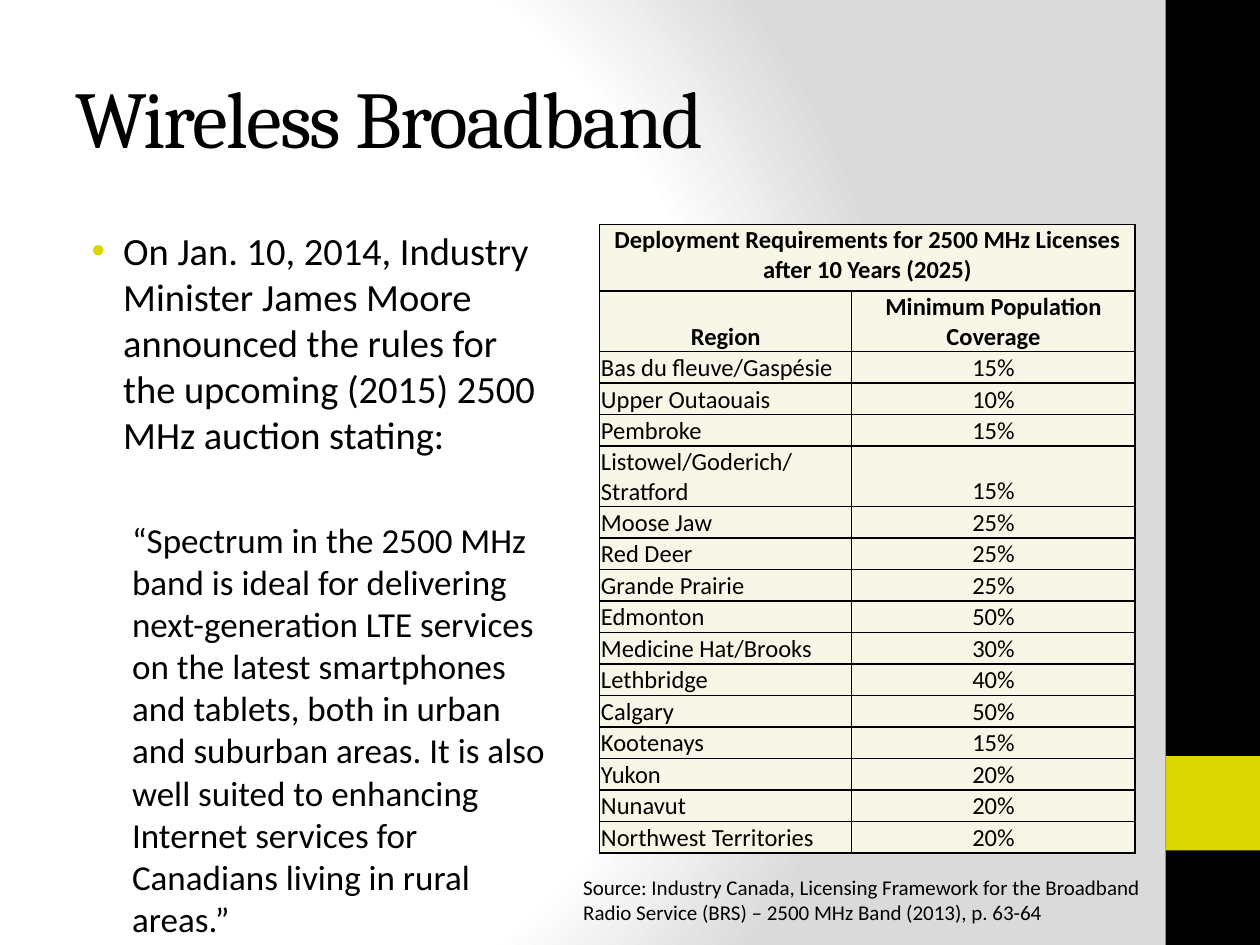
from lxml import etree
from pptx import Presentation
from pptx.dml.color import RGBColor
from pptx.enum import shapes, text
from pptx.oxml import parse_xml
from pptx.oxml.ns import nsdecls, qn
from pptx.util import Inches, Pt

BLACK = RGBColor(0, 0, 0)
LIME = RGBColor(0xDB, 0xD6, 0x00)
CREAM = RGBColor(0xF8, 0xF7, 0xE7)
WHITE = RGBColor(0xFF, 0xFF, 0xFF)
GREY = RGBColor(0xDA, 0xDA, 0xDA)

TABLE_TITLE = "Deployment Requirements for 2500 MHz Licenses after 10 Years (2025)"
HEADINGS = ("Region", "Minimum Population Coverage")
COVERAGE = [
    ("Bas du fleuve/Gaspésie", "15%"),
    ("Upper Outaouais", "10%"),
    ("Pembroke", "15%"),
    ("Listowel/Goderich/ Stratford", "15%"),
    ("Moose Jaw", "25%"),
    ("Red Deer", "25%"),
    ("Grande Prairie", "25%"),
    ("Edmonton", "50%"),
    ("Medicine Hat/Brooks", "30%"),
    ("Lethbridge", "40%"),
    ("Calgary", "50%"),
    ("Kootenays", "15%"),
    ("Yukon", "20%"),
    ("Nunavut", "20%"),
    ("Northwest Territories", "20%"),
]
ANNOUNCEMENT = (
    "On Jan. 10, 2014, Industry Minister James Moore announced the rules "
    "for the upcoming (2015) 2500 MHz auction stating:"
)
QUOTE = (
    "“Spectrum in the 2500 MHz band is ideal for delivering next-generation LTE "
    "services on the latest smartphones and tablets, both in urban and suburban "
    "areas. It is also well suited to enhancing Internet services for Canadians "
    "living in rural areas.”"
)
SOURCE = (
    "Source: Industry Canada, Licensing Framework for the Broadband Radio "
    "Service (BRS) – 2500 MHz Band (2013), p. 63-64"
)


def paint_background(slide):
    slide.background.fill.solid()
    solid = slide.element.find(".//" + qn("p:bgPr")).find(qn("a:solidFill"))
    stops = "".join(
        f'<a:gs pos="{position * 1000}"><a:srgbClr val="{color}"/></a:gs>'
        for position, color in ((0, WHITE), (75, WHITE), (100, GREY))
    )
    gradient = parse_xml(
        f'<a:gradFill {nsdecls("a")} rotWithShape="1"><a:gsLst>{stops}</a:gsLst>'
        '<a:path path="circle"><a:fillToRect l="20000" t="50000" r="100000" '
        'b="50000"/></a:path></a:gradFill>'
    )
    solid.getparent().replace(solid, gradient)


def add_block(slide, top, height, color):
    block = slide.shapes.add_shape(
        shapes.MSO_SHAPE.RECTANGLE,
        Inches(9.25), Inches(top), Inches(0.75), Inches(height),
    )
    block.shadow.inherit = False
    block.fill.solid()
    block.fill.fore_color.rgb = color
    block.line.fill.background()


def add_frame(slide, left, top, width, height):
    frame = slide.shapes.add_textbox(
        Inches(left), Inches(top), Inches(width), Inches(height)
    ).text_frame
    frame.word_wrap = True
    return frame


def add_run(paragraph, words, size, font="Calibri", bold=False):
    run = paragraph.add_run()
    run.text = words
    run.font.size = Pt(size)
    run.font.name = font
    run.font.bold = bold
    run.font.color.rgb = BLACK
    return run


def indent(paragraph, margin, first_line=0):
    properties = paragraph._p.get_or_add_pPr()
    properties.set("marL", str(Inches(margin)))
    properties.set("indent", str(Inches(first_line)))
    return properties


def add_title(slide):
    frame = add_frame(slide, 0.5, 0.3, 8.33, 1.25)
    frame.vertical_anchor = text.MSO_ANCHOR.MIDDLE
    run = add_run(frame.paragraphs[0], "Wireless Broadband", 46, "Cambria")
    run.font._element.set("spc", "-100")


def add_statement(slide):
    frame = add_frame(slide, 0.5, 1.75, 4.03, 5.25)
    announcement = frame.paragraphs[0]
    properties = indent(announcement, 0.38, -0.25)
    bullet_color = etree.SubElement(properties, qn("a:buClr"))
    etree.SubElement(bullet_color, qn("a:srgbClr"), val=str(LIME))
    etree.SubElement(properties, qn("a:buFont"), typeface="Arial")
    etree.SubElement(properties, qn("a:buChar"), char="•")
    add_run(announcement, ANNOUNCEMENT, 22)

    quote = frame.add_paragraph()
    indent(quote, 0.45)
    quote.space_before = Pt(35)
    add_run(quote, QUOTE, 20)


def fill_cell(cell, words="", bold=False, centred=True, anchor=text.MSO_ANCHOR.BOTTOM):
    cell.margin_left = cell.margin_right = cell.margin_top = Inches(0.01)
    cell.margin_bottom = 0
    cell.vertical_anchor = anchor
    properties = cell._tc.get_or_add_tcPr()
    for side in ("lnL", "lnR", "lnT", "lnB"):
        border = etree.SubElement(properties, qn(f"a:{side}"), w=str(Pt(1)))
        line_fill = etree.SubElement(border, qn("a:solidFill"))
        etree.SubElement(line_fill, qn("a:srgbClr"), val=str(BLACK))
    cell.fill.solid()
    cell.fill.fore_color.rgb = CREAM
    if words:
        paragraph = cell.text_frame.paragraphs[0]
        paragraph.alignment = text.PP_ALIGN.CENTER if centred else text.PP_ALIGN.LEFT
        add_run(paragraph, words, 14, bold=bold)


def add_coverage_table(slide):
    table = slide.shapes.add_table(
        len(COVERAGE) + 2, 2, Inches(4.76), Inches(1.78), Inches(4.25), Inches(4.99)
    ).table
    table.first_row = table.horz_banding = False
    for column, width in zip(table.columns, (2, 2.25)):
        column.width = Inches(width)
    for row in table.rows:
        row.height = Inches(0.25)
    for index, height in ((0, 0.53), (1, 0.48), (5, 0.48)):
        table.rows[index].height = Inches(height)

    fill_cell(table.cell(0, 0), TABLE_TITLE, bold=True, anchor=text.MSO_ANCHOR.TOP)
    fill_cell(table.cell(0, 1))
    table.cell(0, 0).merge(table.cell(0, 1))
    for column, heading in enumerate(HEADINGS):
        fill_cell(table.cell(1, column), heading, bold=True)
    for row, (region, share) in enumerate(COVERAGE, start=2):
        fill_cell(table.cell(row, 0), region, centred=False)
        fill_cell(table.cell(row, 1), share)


def add_source(slide):
    frame = add_frame(slide, 4.53, 6.89, 4.65, 0.5)
    add_run(frame.paragraphs[0], SOURCE, 12)


def main():
    deck = Presentation()
    deck.slide_width, deck.slide_height = Inches(10), Inches(7.5)
    slide = deck.slides.add_slide(deck.slide_layouts[6])
    paint_background(slide)
    add_block(slide, 0, 7.5, BLACK)
    add_block(slide, 6, 0.75, LIME)
    add_title(slide)
    add_statement(slide)
    add_coverage_table(slide)
    add_source(slide)
    deck.save("out.pptx")


if __name__ == "__main__":
    main()
